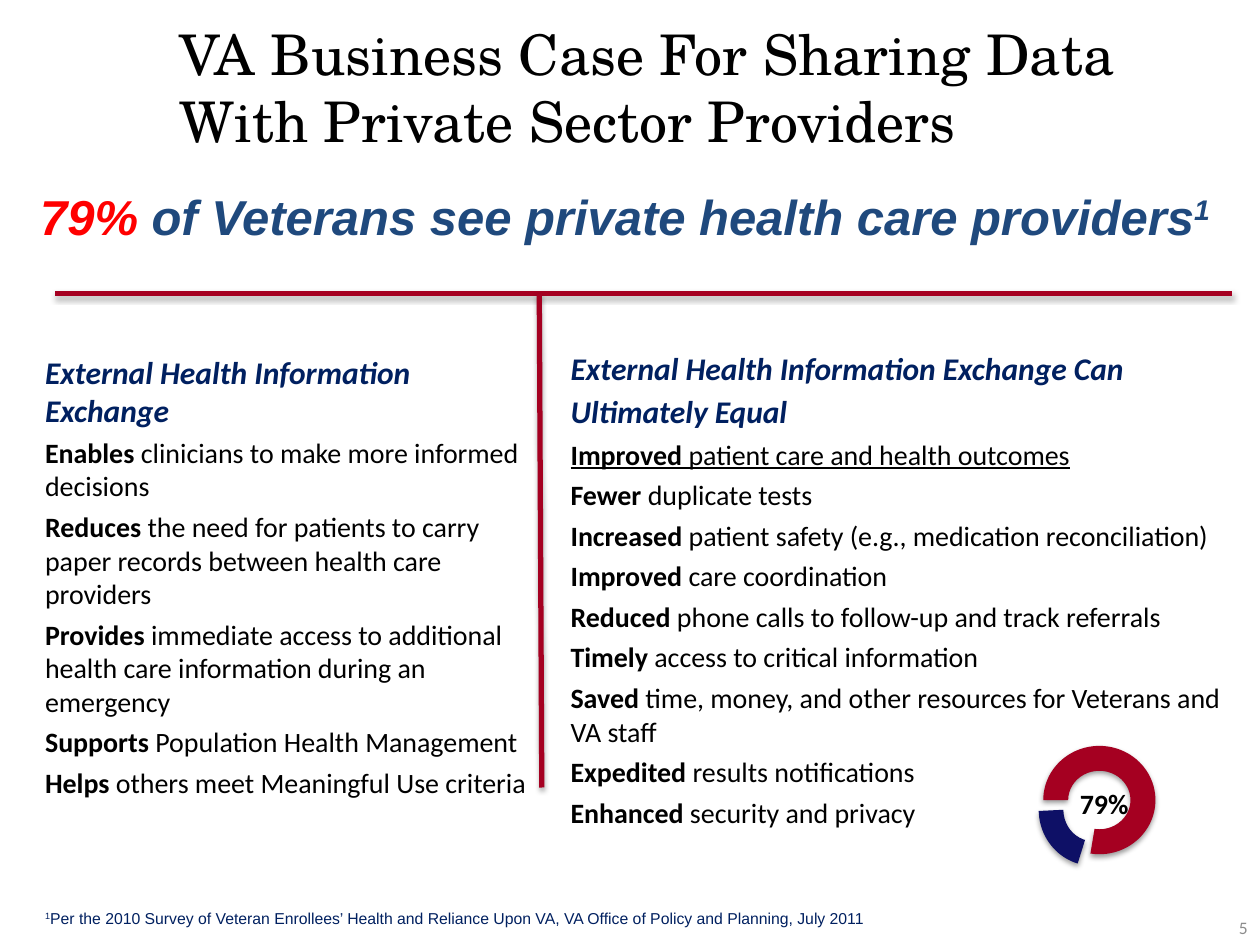
"""Build the slide on the business case for sharing health data."""
import lxml.etree
import pptx
import pptx.dml.color
import pptx.enum.shapes
import pptx.enum.text
import pptx.oxml.ns
import pptx.util

ALIGN = pptx.enum.text.PP_ALIGN
ANCHOR = pptx.enum.text.MSO_ANCHOR
SHAPE = pptx.enum.shapes.MSO_SHAPE
WIDTH, HEIGHT = 10, 7.5
BLACK, NAVY, CRIMSON = "000000", "002060", "A50021"
MARGIN = 0.26
RULE_TOP, RULE_LEFT, RULE_RIGHT = 2.33, 0.44, 9.78
FOOT_TOP = 7.16

TITLE = "VA Business Case For Sharing Data With Private Sector Providers"
FINDING = [
    ("79% ", {"color": "FF0000"}),
    ("of Veterans see private health care providers", {}),
    ("1", {"raised": True}),
]
FOOTNOTE = [
    ("1", {"raised": True}),
    ("Per the 2010 Survey of Veteran Enrollees’ Health and Reliance Upon VA, "
     "VA Office of Policy and Planning, July 2011", {}),
]
ENABLERS = ("External Health Information Exchange", [
    ("Enables", "clinicians to make more informed decisions"),
    ("Reduces", "the need for patients to carry paper records between health care providers"),
    ("Provides", "immediate access to additional health care information during an emergency"),
    ("Supports", "Population Health Management"),
    ("Helps", "others meet Meaningful Use criteria"),
])
OUTCOMES = ("External Health Information Exchange Can Ultimately Equal", [
    ("Improved", "patient care and health outcomes"),
    ("Fewer", "duplicate tests"),
    ("Increased", "patient safety (e.g., medication reconciliation)"),
    ("Improved", "care coordination"),
    ("Reduced", "phone calls to follow-up and track referrals"),
    ("Timely", "access to critical information"),
    ("Saved", "time, money, and other resources for Veterans and VA staff"),
    ("Expedited", "results notifications"),
    ("Enhanced", "security and privacy"),
])
RING = [
    ((8.23, 5.97, 0.92, 0.89), 110.8, (213.95, 39.86, 0.22), "0E1066"),
    ((8.28, 5.92, 0.89, 0.86), 0, (108, 59.68, 0.23), CRIMSON),
]
DIVIDERS = [
    ((RULE_LEFT, RULE_TOP), (RULE_RIGHT, RULE_TOP)),
    ((4.28, RULE_TOP), (4.3, 6.25)),
]


def rgb(value):
    """Turn a hex string into a colour."""
    return pptx.dml.color.RGBColor.from_string(value)


def inches(values):
    """Turn numbers into lengths in inches."""
    return [pptx.util.Inches(value) for value in values]


def add_shadow(part, opacity, distance):
    """Drop a soft black shadow straight down."""
    effects = lxml.etree.SubElement(part._element.spPr, pptx.oxml.ns.qn("a:effectLst"))
    shade = lxml.etree.SubElement(
        effects, pptx.oxml.ns.qn("a:outerShdw"), blurRad=str(pptx.util.Pt(3.1)),
        dist=str(pptx.util.Pt(distance)), dir="5400000", rotWithShape="0")
    black = lxml.etree.SubElement(shade, pptx.oxml.ns.qn("a:srgbClr"), val=BLACK)
    lxml.etree.SubElement(black, pptx.oxml.ns.qn("a:alpha"), val=str(opacity * 1000))


def write(paragraph, text, font="Calibri", size=16, color=BLACK, bold=False,
          italic=False, underline=False, raised=False):
    """Add one formatted run to a paragraph."""
    run = paragraph.add_run()
    run.text = text
    run.font.name, run.font.size = font, pptx.util.Pt(size)
    run.font.bold, run.font.italic, run.font.underline = bold, italic, underline
    run.font.color.rgb = rgb(color)
    if raised:
        run.font._element.set("baseline", "30000")


def add_box(parts, box, anchor=ANCHOR.TOP, align=ALIGN.LEFT, wrap=True):
    """Add a text box and return its frame."""
    frame = parts.add_textbox(*inches(box)).text_frame
    frame.word_wrap, frame.vertical_anchor = wrap, anchor
    frame.paragraphs[0].alignment = align
    return frame


def fill_column(frame, column, underlined=()):
    """Write a heading and its points with bold lead words."""
    heading, points = column
    write(frame.paragraphs[0], heading, size=18, color=NAVY, bold=True, italic=True)
    for index, (lead, rest) in enumerate(points):
        point = frame.add_paragraph()
        point.alignment = ALIGN.LEFT
        point.space_before = pptx.util.Pt(4)
        write(point, lead, bold=True, underline=index in underlined)
        write(point, f" {rest}", underline=index in underlined)


def add_ring(slide):
    """Draw the two-part ring with its share in the middle."""
    ring = slide.shapes.add_group_shape().shapes
    for box, turn, bends, color in RING:
        arc = ring.add_shape(SHAPE.BLOCK_ARC, *inches(box))
        arc.rotation = turn
        for index, bend in enumerate(bends):
            arc.adjustments[index] = bend
        arc.fill.solid()
        arc.fill.fore_color.rgb = rgb(color)
        arc.line.fill.background()
        add_shadow(arc, 38, 1.6)
    share = add_box(ring, (8.57, 6.24, 0.4, 0.23), wrap=False)
    share.margin_left = share.margin_right = share.margin_top = share.margin_bottom = 0
    write(share.paragraphs[0], "79%", bold=True)


def main():
    """Build and save the slide."""
    deck = pptx.Presentation()
    deck.slide_width, deck.slide_height = inches((WIDTH, HEIGHT))
    slide = deck.slides.add_slide(deck.slide_layouts[6])

    title = add_box(slide.shapes, (1.33, 0.24, 8.26, 1.03), ANCHOR.BOTTOM)
    write(title.paragraphs[0], TITLE, font="TeX Gyre Schola", size=32)
    add_ring(slide)

    outcomes = add_box(slide.shapes, (4.43, 2.67, 5.48, 2.59))
    outcomes.paragraphs[0].line_spacing = pptx.util.Pt(25)
    fill_column(outcomes, OUTCOMES, underlined=(0,))

    panel = slide.shapes.add_shape(SHAPE.RECTANGLE, *inches((MARGIN, 2.75, 4.04, 3.99)))
    panel.shadow.inherit = False
    panel.fill.solid()
    panel.fill.fore_color.rgb = rgb("FFFFFF")
    panel.line.fill.background()
    panel.text_frame.word_wrap = True
    panel.text_frame.vertical_anchor = ANCHOR.TOP
    panel.text_frame.paragraphs[0].alignment = ALIGN.LEFT
    fill_column(panel.text_frame, ENABLERS)

    for start, end in DIVIDERS:
        divider = slide.shapes.add_connector(
            pptx.enum.shapes.MSO_CONNECTOR.STRAIGHT, *inches(start + end))
        divider.line.color.rgb = rgb(CRIMSON)
        divider.line.width = pptx.util.Pt(3)
        add_shadow(divider, 35, 1.8)

    finding = add_box(slide.shapes, (0, 1.55, 9.92, 0.45), align=ALIGN.CENTER).paragraphs[0]
    finding.line_spacing, finding.space_after = pptx.util.Pt(25), pptx.util.Pt(6)
    for text, extra in FINDING:
        write(finding, text, **{"font": "Arial", "size": 28, "color": "1F497D",
                                "bold": True, "italic": True, **extra})

    footnote = add_box(slide.shapes, (MARGIN, FOOT_TOP, 7.59, 0.25)).paragraphs[0]
    for text, extra in FOOTNOTE:
        write(footnote, text, font="Arial", size=9, color=NAVY, **extra)

    number = add_box(slide.shapes, (7.75, FOOT_TOP, 2.25, 0.4), ANCHOR.MIDDLE, ALIGN.RIGHT)
    write(number.paragraphs[0], "5", size=10, color="8C8C8C")
    deck.save("out.pptx")


if __name__ == "__main__":
    main()
